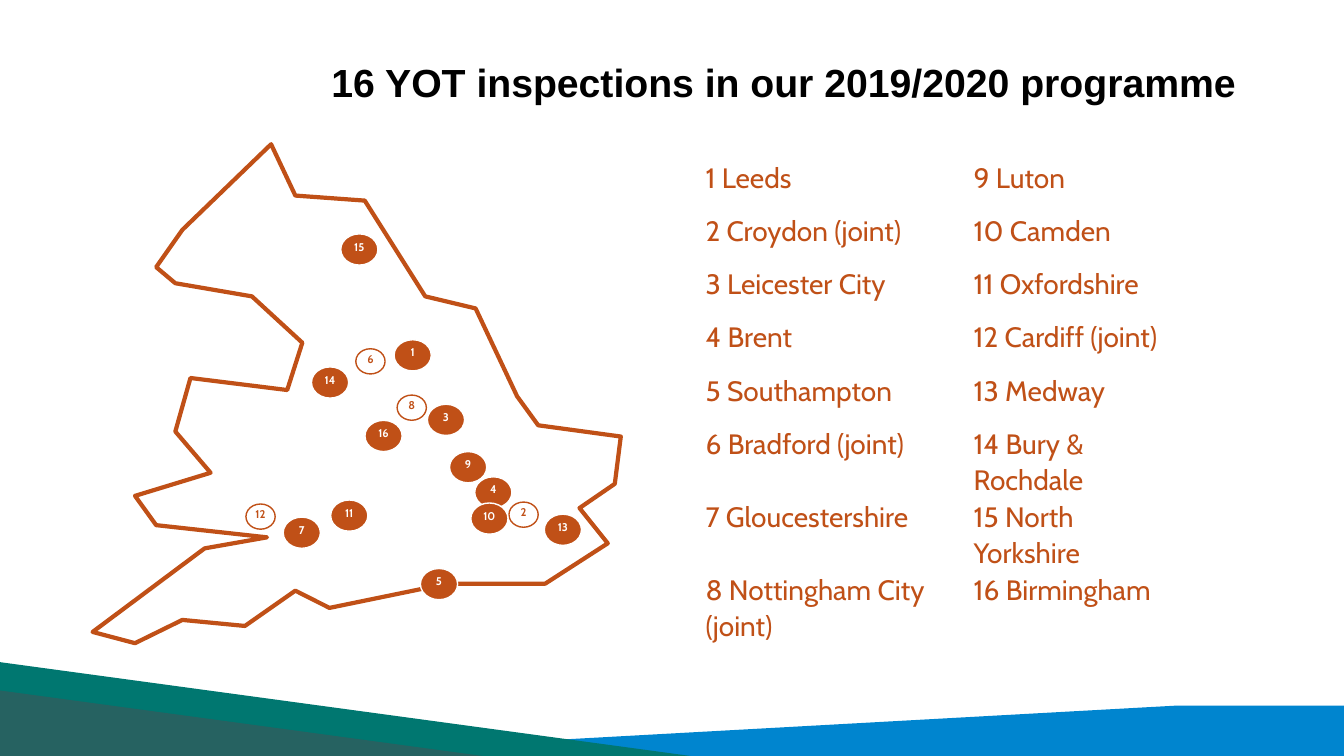
from dataclasses import dataclass

from pptx import Presentation
from pptx.dml.color import RGBColor
from pptx.enum.shapes import MSO_SHAPE as Shape
from pptx.enum.text import MSO_ANCHOR as Anchor, PP_ALIGN as Align
from pptx.oxml.ns import qn
from pptx.util import Pt


@dataclass(frozen=True)
class Theme:
    orange: str = "C05017"
    white: str = "FFFFFF"
    black: str = "000000"
    blue: str = "0085CF"
    green: str = "007770"
    grey: str = "4D4E53"
    heading_font: str = "Arial"
    body_font: str = "Cabin"
    title_size: float = 28
    list_size: float = 20
    marker_size: float = 8


THEME = Theme()

TITLE = "16 YOT inspections in our 2019/2020 programme"

# Inspection number: place, centre x, centre y
INSPECTIONS = {
    1: ("Leeds", 294.8, 253.8),
    2: ("Croydon (joint)", 374, 367.6),
    3: ("Leicester City", 318.6, 299.9),
    4: ("Brent", 352.4, 351.7),
    5: ("Southampton", 313.6, 417.2),
    6: ("Bradford (joint)", 264.6, 258.1),
    7: ("Gloucestershire", 215.6, 380.5),
    8: ("Nottingham City (joint)", 294.1, 291.2),
    9: ("Luton", 334.4, 333.7),
    10: ("Camden", 349.6, 370.4),
    11: ("Oxfordshire", 249.5, 368.3),
    12: ("Cardiff (joint)", 186.1, 369),
    13: ("Medway", 402.1, 378.4),
    14: ("Bury & Rochdale", 235.8, 273.2),
    15: ("North Yorkshire", 256.7, 178.2),
    16: ("Birmingham", 274, 311.4),
}

COASTLINE = [
    (130.3, 164.2), (111.6, 190.8), (125.3, 202.3), (180, 211.7),
    (216, 244.8), (205.2, 278.6), (136.1, 270), (125.3, 308.2),
    (150.5, 337.7), (96.5, 354.2), (111.6, 375.1), (190.8, 383.8),
    (146.2, 391.7), (66.2, 451.4), (96.5, 459.4), (130.3, 442.8),
    (175, 447.1), (211, 421.9), (235.4, 434.2), (319.7, 416.9),
    (389.5, 416.9), (434.2, 388.1), (414, 362.9), (439.2, 345.6),
    (443.5, 311.8), (384.5, 303.8), (369.4, 283), (339.8, 220.3),
    (303.8, 211.7), (260.6, 143.3), (211, 139.7), (193.7, 103),
]

BLUE_BAND = [(188.6, 540), (841, 504), (960, 504), (960, 540)]


def set_values(target, values):
    for name, value in values.items():
        setattr(target, name, value)


def paint(shape, fill=None, line=None, width=1):
    shape.shadow.inherit = False
    if fill:
        shape.fill.solid()
        shape.fill.fore_color.rgb = RGBColor.from_string(fill)
    else:
        shape.fill.background()
    if line:
        shape.line.color.rgb = RGBColor.from_string(line)
        shape.line.width = Pt(width)
    else:
        shape.line.fill.background()


def write(frame, text, color, font, align=Align.LEFT, line_spacing=1.0):
    paragraph = frame.paragraphs[0]
    set_values(paragraph, {"alignment": align, "line_spacing": line_spacing})
    run = paragraph.add_run()
    run.text = text
    set_values(run.font, font)
    run.font.color.rgb = RGBColor.from_string(color)


def add_outline(shapes, points, **look):
    start, *rest = [(Pt(x), Pt(y)) for x, y in points]
    builder = shapes.build_freeform(*start)
    builder.add_line_segments(rest, close=True)
    paint(builder.convert_to_shape(), **look)


def add_corner(slide, top, width, color, opacity=100):
    shape = slide.shapes.add_shape(
        Shape.RIGHT_TRIANGLE, 0, Pt(top), Pt(width), Pt(540 - top))
    paint(shape, fill=color)
    if opacity < 100:
        tint = next(shape.element.iter(qn("a:srgbClr")))
        alpha = tint.makeelement(qn("a:alpha"), {"val": str(opacity * 1000)})
        tint.append(alpha)


def add_marker(shapes, number, place, x, y):
    """Filled oval for a single inspection, hollow smaller oval for a joint one."""
    joint = "(joint)" in place
    width, height = (20.9, 18) if joint else (26.6, 22.3)
    oval = shapes.add_shape(Shape.OVAL, Pt(x - width / 2), Pt(y - height / 2),
                            Pt(width), Pt(height))
    if joint:
        paint(oval, line=THEME.orange)
    else:
        paint(oval, fill=THEME.orange, line=THEME.white)
    set_values(oval.text_frame, {
        "margin_left": 0, "margin_right": 0, "margin_bottom": 0,
        "margin_top": 0 if joint else Pt(1),
        "word_wrap": False, "vertical_anchor": Anchor.TOP})
    write(oval.text_frame, str(number), THEME.orange if joint else THEME.white,
          {"name": THEME.body_font, "size": Pt(THEME.marker_size), "bold": True},
          Align.CENTER)


def add_map(slide):
    shapes = slide.shapes.add_group_shape().shapes
    add_outline(shapes, COASTLINE, fill=THEME.white, line=THEME.orange, width=3)
    for number, inspection in INSPECTIONS.items():
        add_marker(shapes, number, *inspection)


def add_title(slide):
    box = slide.shapes.add_textbox(Pt(229.7), Pt(36.7), Pt(668.9), Pt(43.2))
    set_values(box.text_frame, {"word_wrap": True, "vertical_anchor": Anchor.MIDDLE})
    write(box.text_frame, TITLE, THEME.black,
          {"name": THEME.heading_font, "size": Pt(THEME.title_size), "bold": True})


def add_place_list(slide):
    column_widths = (191.5, 160.6)
    row_count = len(INSPECTIONS) // len(column_widths)
    row_height = 37.9
    table = slide.shapes.add_table(
        row_count, len(column_widths), Pt(499), Pt(113.8),
        Pt(sum(column_widths)), Pt(row_height * row_count)).table
    set_values(table, {"first_row": False, "horz_banding": False})
    for column, width in zip(table.columns, column_widths):
        column.width = Pt(width)
    for row in table.rows:
        row.height = Pt(row_height)
    # Numbers run down the first column, then down the second
    for number, (place, *_) in INSPECTIONS.items():
        column, row = divmod(number - 1, row_count)
        cell = table.cell(row, column)
        cell.fill.background()
        set_values(cell, {"margin_left": Pt(5), "margin_right": Pt(5),
                          "margin_top": 0, "margin_bottom": 0})
        write(cell.text_frame, f"{number} {place}", THEME.orange,
              {"name": THEME.body_font, "size": Pt(THEME.list_size)},
              line_spacing=1.07)


def main():
    presentation = Presentation()
    set_values(presentation, {"slide_width": Pt(960), "slide_height": Pt(540)})
    slide = presentation.slides.add_slide(presentation.slide_layouts[6])

    # Footer bands
    add_outline(slide.shapes, BLUE_BAND, fill=THEME.blue)
    add_corner(slide, 473, 493.2, THEME.green)
    add_corner(slide, 493.2, 344.9, THEME.grey, opacity=50)

    # Content
    add_place_list(slide)
    add_title(slide)
    add_map(slide)

    presentation.save("out.pptx")


if __name__ == "__main__":
    main()
